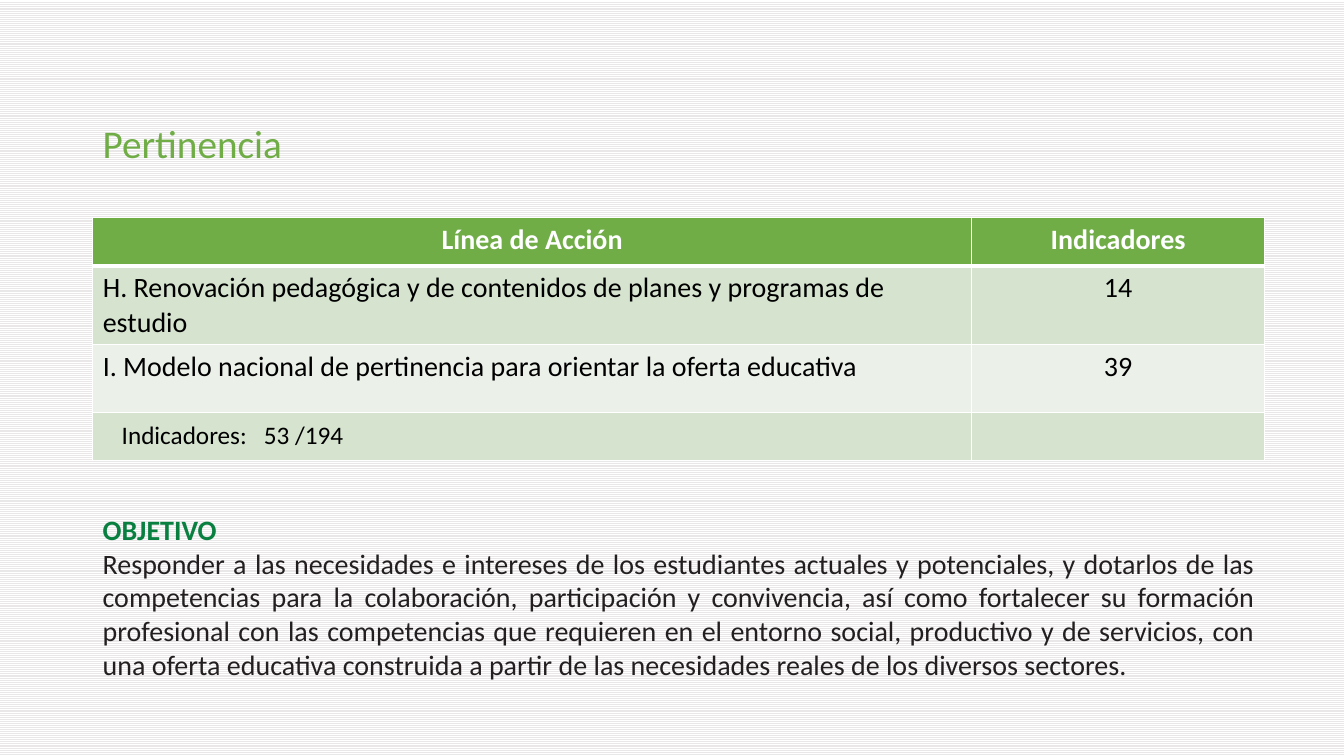
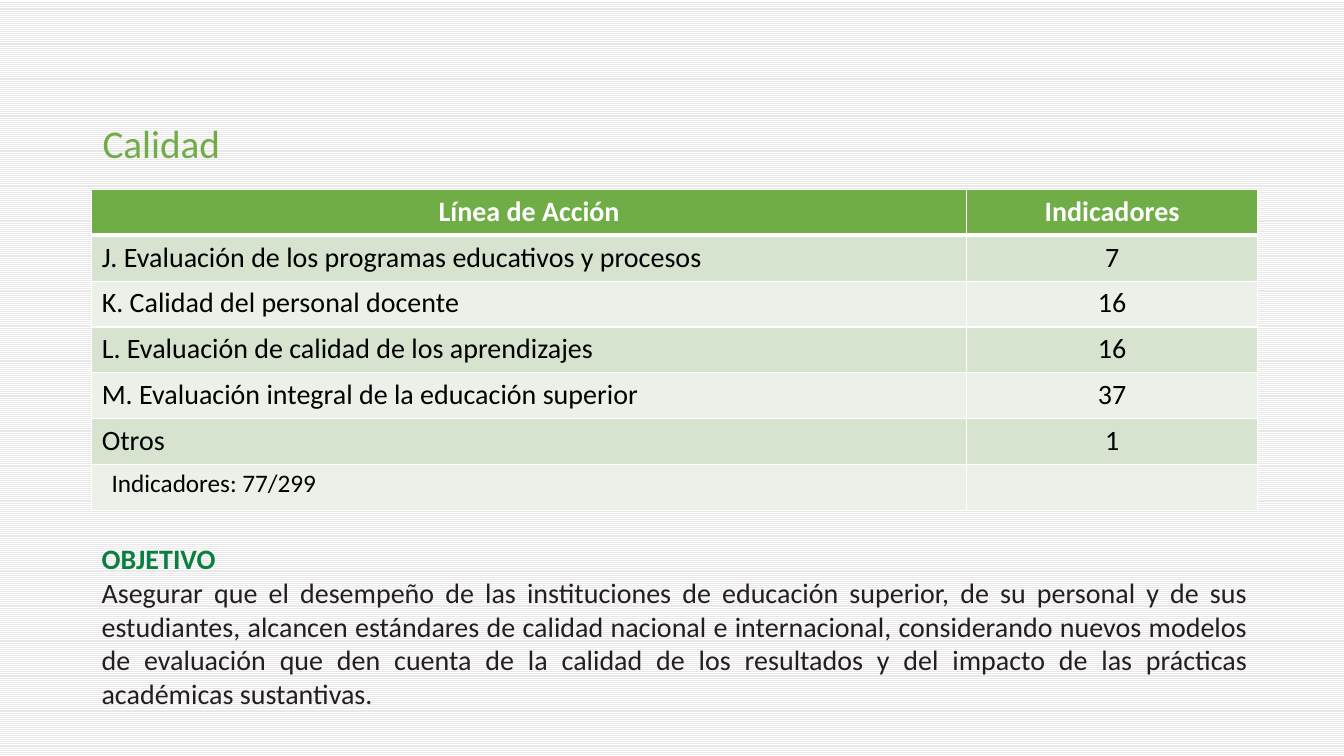
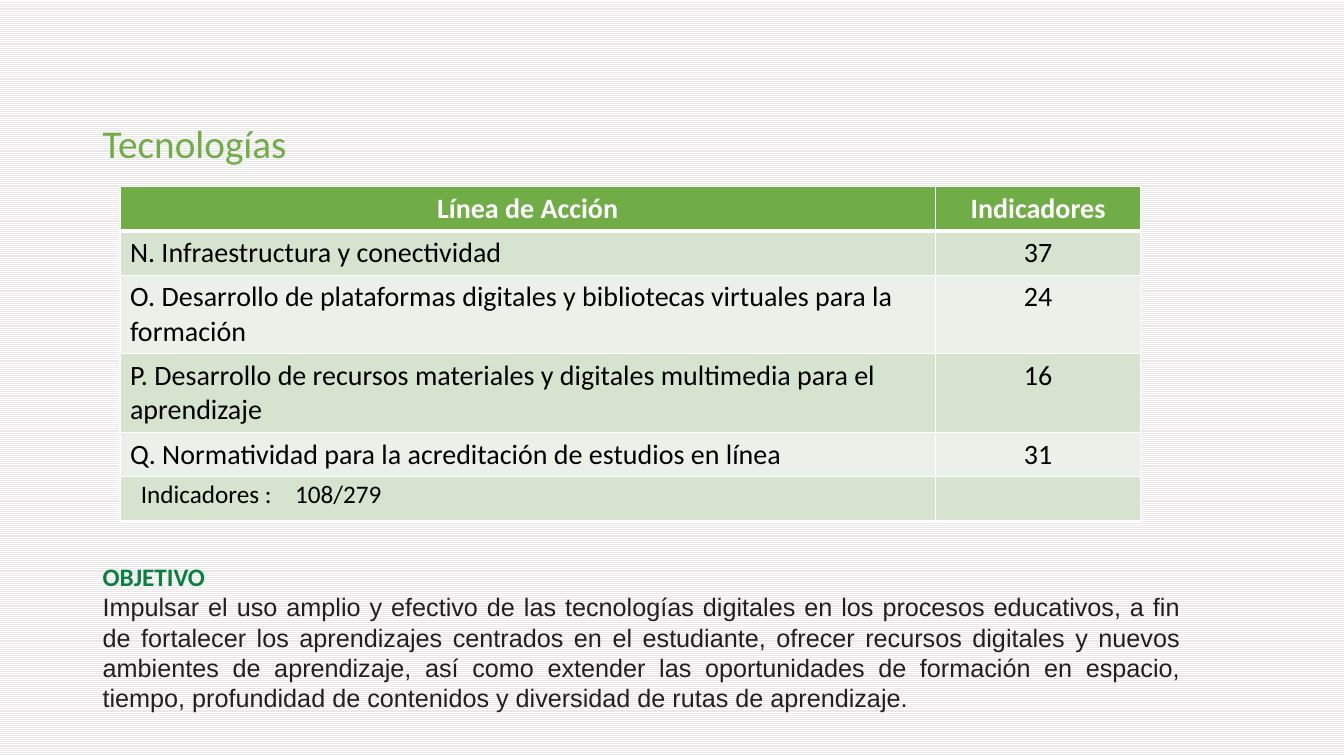
from lxml.etree import SubElement
from pptx import Presentation
from pptx.dml.color import RGBColor
from pptx.enum.dml import MSO_PATTERN
from pptx.enum.text import MSO_ANCHOR as Anchor, PP_ALIGN as Align
from pptx.oxml.ns import qn
from pptx.util import Emu, Pt

EMU_PER_PX = 4572
SLIDE_SIZE = (2667, 1500)
TITLE_BOX = (184, 210, 2300, 160)
FONT = "Calibri"
HEADINGS = ("Línea de Acción", "Indicadores")
COLORS = {
    "green": "70AD47",
    "dark_green": "097F40",
    "band_dark": "D5E3CF",
    "band_light": "EBF1E9",
    "stripe": "E9E7E7",
    "white": "FFFFFF",
    "black": "000000",
    "ink": "231F20",
}

SECTIONS = [
    {
        "title": "Pertinencia",
        "table_origin": (184, 432),
        "columns": (1744, 582),
        "row_heights": (96, 156, 134, 96),
        "lines": [
            ("H. Renovación pedagógica y de contenidos de planes y programas de estudio", "14"),
            ("I. Modelo nacional de pertinencia para orientar la oferta educativa", "39"),
        ],
        "total": "Indicadores:\t53 /194",
        "total_box": (222, 822, 514, 80),
        "total_tab": 282,
        "objective": "Responder a las necesidades e intereses de los estudiantes actuales y potenciales, y dotarlos de las competencias para la colaboración, participación y convivencia, así como fortalecer su formación profesional con las competencias que requieren en el entorno social, productivo y de servicios, con una oferta educativa construida a partir de las necesidades reales de los diversos sectores.",
        "objective_box": (184, 1006, 2326, 356),
        "objective_size": 20,
        "objective_font": FONT,
    },
    {
        "title": "Calidad",
        "table_origin": (182, 376),
        "columns": (1736, 578),
        "row_heights": (91,) * 7,
        "lines": [
            ("J. Evaluación de los programas educativos y procesos", "7"),
            ("K. Calidad del personal docente", "16"),
            ("L. Evaluación de calidad de los aprendizajes", "16"),
            ("M. Evaluación integral de la educación superior", "37"),
            ("Otros", "1"),
        ],
        "total": "Indicadores: 77/299",
        "total_box": (202, 918, 490, 80),
        "total_tab": None,
        "objective": "Asegurar que el desempeño de las instituciones de educación superior, de su personal y de sus estudiantes, alcancen estándares de calidad nacional e internacional, considerando nuevos modelos de evaluación que den cuenta de la calidad de los resultados y del impacto de las prácticas académicas sustantivas.",
        "objective_box": (182, 1064, 2314, 356),
        "objective_size": 20,
        "objective_font": FONT,
    },
    {
        "title": "Tecnologías",
        "table_origin": (238, 370),
        "columns": (1618, 408),
        "row_heights": (88, 88, 156, 156, 88, 88),
        "lines": [
            ("N. Infraestructura y conectividad", "37"),
            ("O. Desarrollo de plataformas digitales y bibliotecas virtuales para la formación", "24"),
            ("P. Desarrollo de recursos materiales y digitales multimedia para el aprendizaje", "16"),
            ("Q. Normatividad para la acreditación de estudios en línea", "31"),
        ],
        "total": "Indicadores :\t108/279",
        "total_box": (260, 940, 658, 80),
        "total_tab": 306,
        "objective": "Impulsar el uso amplio y efectivo de las tecnologías digitales en los procesos educativos, a fin de fortalecer los aprendizajes centrados en el estudiante, ofrecer recursos digitales y nuevos ambientes de aprendizaje, así como extender las oportunidades de formación en espacio, tiempo, profundidad de contenidos y diversidad de rutas de aprendizaje.",
        "objective_box": (184, 1102, 2178, 324),
        "objective_size": 18,
        "objective_font": "Arial",
    },
]


def px(length):
    return Emu(length * EMU_PER_PX)


def rgb(name):
    return RGBColor.from_string(COLORS[name])


def write(paragraph, text, size=20, color="black", bold=False, font=FONT,
          align=Align.LEFT, line_spacing=None, tab=None):
    paragraph.alignment = align
    if line_spacing:
        paragraph.line_spacing = line_spacing
    if tab:
        tab_list = SubElement(paragraph._p.get_or_add_pPr(), qn("a:tabLst"))
        SubElement(tab_list, qn("a:tab"), pos=str(px(tab)), algn="l")
    run = paragraph.add_run()
    run.text = text
    run.font.size = Pt(size)
    run.font.bold = bold
    run.font.name = font
    run.font.color.rgb = rgb(color)


def add_frame(slide, box, anchor=Anchor.TOP):
    frame = slide.shapes.add_textbox(*map(px, box)).text_frame
    frame.word_wrap = True
    frame.vertical_anchor = anchor
    return frame


def set_borders(cell, top=1, bottom=1):
    properties = cell._tc.get_or_add_tcPr()
    for side, width in (("L", 1), ("R", 1), ("T", top), ("B", bottom)):
        line = SubElement(properties, qn(f"a:ln{side}"), w=str(Pt(width)))
        fill = SubElement(line, qn("a:solidFill"))
        SubElement(fill, qn("a:srgbClr"), val=COLORS["white"])


def fill_cell(cell, color, **borders):
    set_borders(cell, **borders)
    cell.fill.solid()
    cell.fill.fore_color.rgb = rgb(color)


def add_background(slide):
    fill = slide.background.fill
    fill.patterned()
    fill.pattern = MSO_PATTERN.LIGHT_HORIZONTAL
    fill.fore_color.rgb = rgb("stripe")
    fill.back_color.rgb = rgb("white")


def add_title(slide, box, text):
    frame = add_frame(slide, box, Anchor.MIDDLE)
    write(frame.paragraphs[0], text, size=28, color="green", line_spacing=0.9)


def add_indicator_table(slide, origin, columns, row_heights, lines):
    size = (sum(columns), sum(row_heights))
    table = slide.shapes.add_table(
        len(row_heights), len(columns), *map(px, origin + size)).table
    table.horz_banding = False
    for column, width in zip(table.columns, columns):
        column.width = px(width)
    for row, height in zip(table.rows, row_heights):
        row.height = px(height)

    for index, row in enumerate(table.rows):
        for cell in row.cells:
            if index == 0:
                fill_cell(cell, "green", bottom=3)
            else:
                band = "band_dark" if index % 2 else "band_light"
                fill_cell(cell, band, top=3 if index == 1 else 1)

    for cell, heading in zip(table.rows[0].cells, HEADINGS):
        write(cell.text_frame.paragraphs[0], heading, color="white", bold=True,
              align=Align.CENTER)
    for index, line in enumerate(lines, start=1):
        for cell, text, align in zip(table.rows[index].cells, line,
                                     (Align.LEFT, Align.CENTER)):
            write(cell.text_frame.paragraphs[0], text, align=align)


def add_total(slide, box, text, tab):
    write(add_frame(slide, box).paragraphs[0], text, size=18, tab=tab)


def add_objective(slide, box, text, size, font):
    frame = add_frame(slide, box, Anchor.MIDDLE)
    write(frame.paragraphs[0], "OBJETIVO", size=size, color="dark_green", bold=True)
    write(frame.add_paragraph(), text, size=size, color="ink", font=font,
          align=Align.JUSTIFY)


def add_section_slide(presentation, section):
    slide = presentation.slides.add_slide(presentation.slide_layouts[6])
    add_background(slide)
    add_title(slide, TITLE_BOX, section["title"])
    add_indicator_table(slide, section["table_origin"], section["columns"],
                        section["row_heights"], section["lines"])
    add_total(slide, section["total_box"], section["total"], section["total_tab"])
    add_objective(slide, section["objective_box"], section["objective"],
                  section["objective_size"], section["objective_font"])


def main():
    presentation = Presentation()
    presentation.slide_width, presentation.slide_height = map(px, SLIDE_SIZE)
    for section in SECTIONS:
        add_section_slide(presentation, section)
    presentation.save("out.pptx")


if __name__ == "__main__":
    main()
